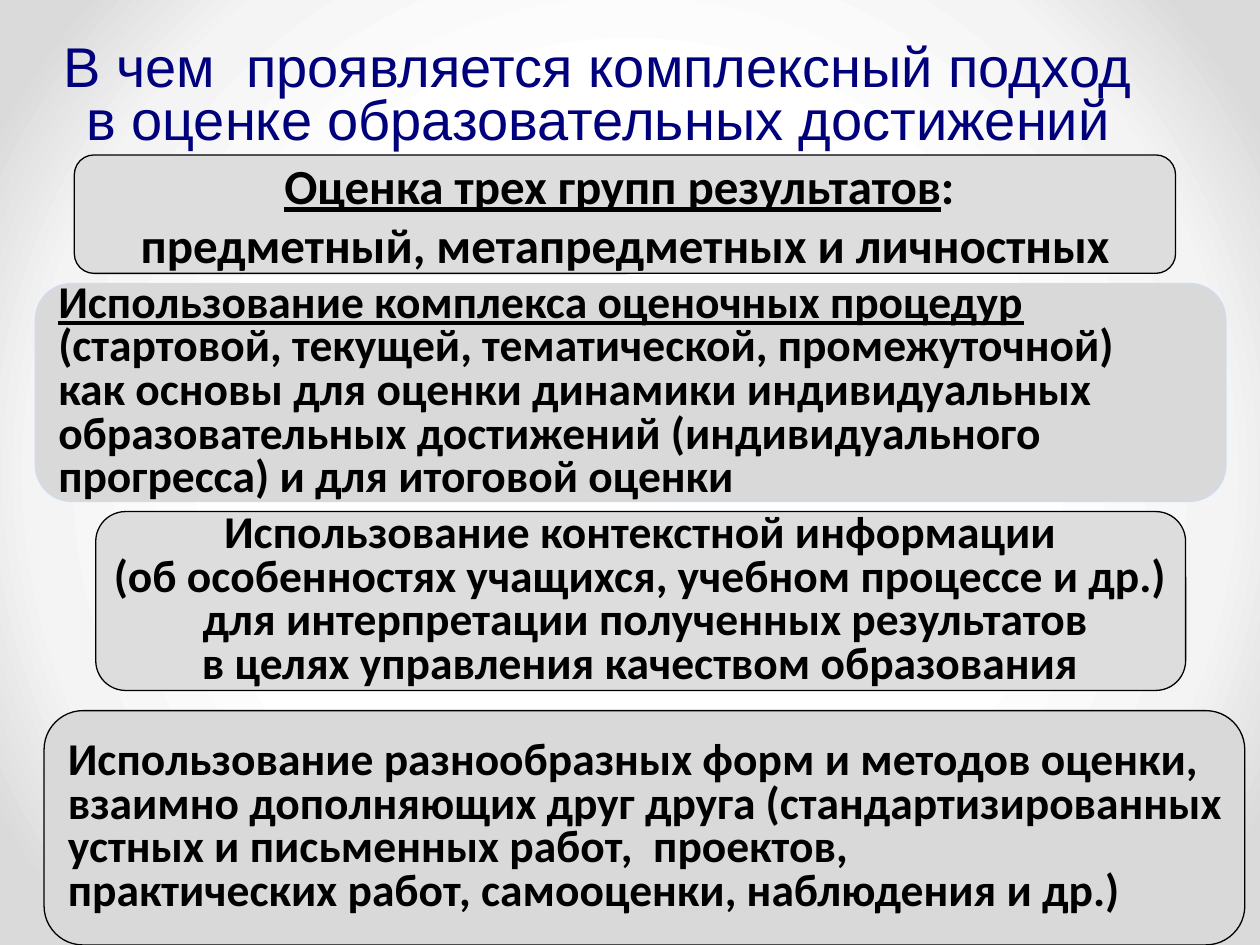
from lxml import etree
from pptx import Presentation, util as u
from pptx.dml.color import RGBColor
from pptx.enum import shapes, text
from pptx.oxml import ns

COLORS = {"ink": "000000", "title": "00007D", "light": "DDDDDD", "grey": "D9D9D9",
          "pale": "CFDCF0"}
GLOW = [(50, "FFFFFF"), (76, "F4F4F4"), (92, "DADADA")]
CENTER, JUSTIFY = text.PP_ALIGN.CENTER, text.PP_ALIGN.JUSTIFY


class Deck:
    def __init__(self, width, height):
        self.prs = Presentation()
        self.prs.slide_width, self.prs.slide_height = u.Inches(width), u.Inches(height)
        self.s = self.prs.slides.add_slide(self.prs.slide_layouts[6])

    def background(self, stops):
        """Radial gradient spreading from the slide centre."""
        self.s.background.fill.gradient()
        grad = next(self.s.element.iter(ns.qn("a:gradFill")))
        for child in list(grad):
            grad.remove(child)
        gs_list = etree.SubElement(grad, ns.qn("a:gsLst"))
        for pos, color in stops:
            gs = etree.SubElement(gs_list, ns.qn("a:gs"), pos=str(pos * 1000))
            etree.SubElement(gs, ns.qn("a:srgbClr"), val=color)
        circle = etree.SubElement(grad, ns.qn("a:path"), {"path": "circle"})
        etree.SubElement(circle, ns.qn("a:fillToRect"),
                         {side: "50000" for side in "ltrb"})

    def add_lines(self, tf, lines, size, font, color, align, spacing, bold=False):
        """Each line is a list of (text, underlined) runs."""
        for i, runs in enumerate(lines):
            p = tf.paragraphs[0] if i == 0 else tf.add_paragraph()
            p.alignment, p.line_spacing = align, spacing
            for words, underlined in runs:
                r = p.add_run()
                r.text = words
                r.font.name, r.font.size = font, u.Pt(size)
                r.font.bold, r.font.underline = bold, underlined
                r.font.color.rgb = RGBColor.from_string(COLORS[color])

    def title(self, box, words):
        tf = self.s.shapes.add_textbox(*map(u.Inches, box)).text_frame
        tf.word_wrap = True
        self.add_lines(tf, [[(words, False)]], 32, "Arial", "title", CENTER, 0.8)

    def panel(self, box, lines, fill="grey", line="ink", size=26, align=JUSTIFY,
              spacing=0.8):
        sp = self.s.shapes.add_shape(shapes.MSO_SHAPE.ROUNDED_RECTANGLE,
                                     *map(u.Inches, box))
        sp.shadow.inherit = False
        sp.fill.solid()
        sp.fill.fore_color.rgb = RGBColor.from_string(COLORS[fill])
        sp.line.color.rgb = RGBColor.from_string(COLORS[line])
        sp.line.width = u.Pt(0.75)
        tf = sp.text_frame
        tf.word_wrap = False
        tf.vertical_anchor = text.MSO_ANCHOR.MIDDLE
        self.add_lines(tf, lines, size, "Calibri", "ink", align, spacing, bold=True)


def plain(*lines):
    return [[(line, False)] for line in lines]


def main():
    deck = Deck(10, 7.5)
    deck.background(GLOW)

    # Three groups of results
    deck.panel((0.59, 1.23, 8.74, 0.94),
               [[("Оценка трех групп результатов", True), (": ", False)]]
               + plain("предметный, метапредметных и личностных"),
               fill="light", size=28, align=CENTER, spacing=1.0)

    # Forms and methods
    deck.panel((0.35, 5.64, 9.53, 1.86),
               plain("Использование разнообразных форм и методов оценки,",
                     "взаимно дополняющих друг друга (стандартизированных",
                     "устных и письменных работ,  проектов, ",
                     "практических работ, самооценки, наблюдения и др.)"))

    # Assessment procedures
    deck.panel((0.28, 2.25, 9.45, 1.73),
               [[("Использование комплекса оценочных процедур", True)]]
               + plain("(стартовой, текущей, тематической, промежуточной) ",
                       "как основы для оценки динамики индивидуальных ",
                       "образовательных достижений (индивидуального",
                       "прогресса) и для итоговой оценки"),
               line="pale")

    # Context information
    deck.panel((0.76, 4.06, 8.65, 1.42),
               plain("Использование контекстной информации",
                     "(об особенностях учащихся, учебном процессе и др.)",
                     " для интерпретации полученных результатов",
                     "в целях управления качеством образования"),
               fill="light", align=CENTER)

    # Title
    deck.title((0.28, 0.3, 8.94, 1.25),
               "В чем  проявляется комплексный подход в оценке образовательных достижений")
    deck.prs.save("out.pptx")


if __name__ == "__main__":
    main()
